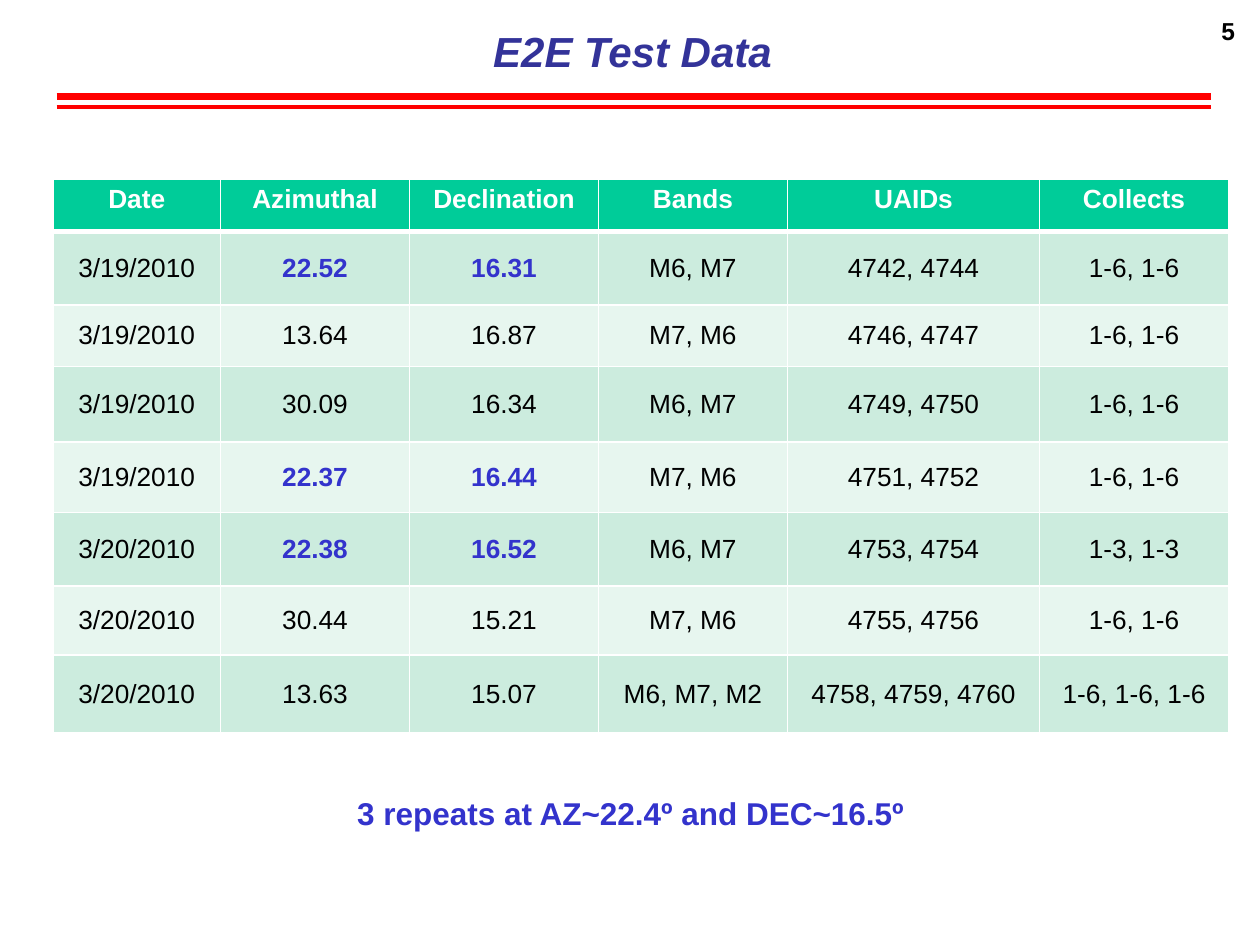
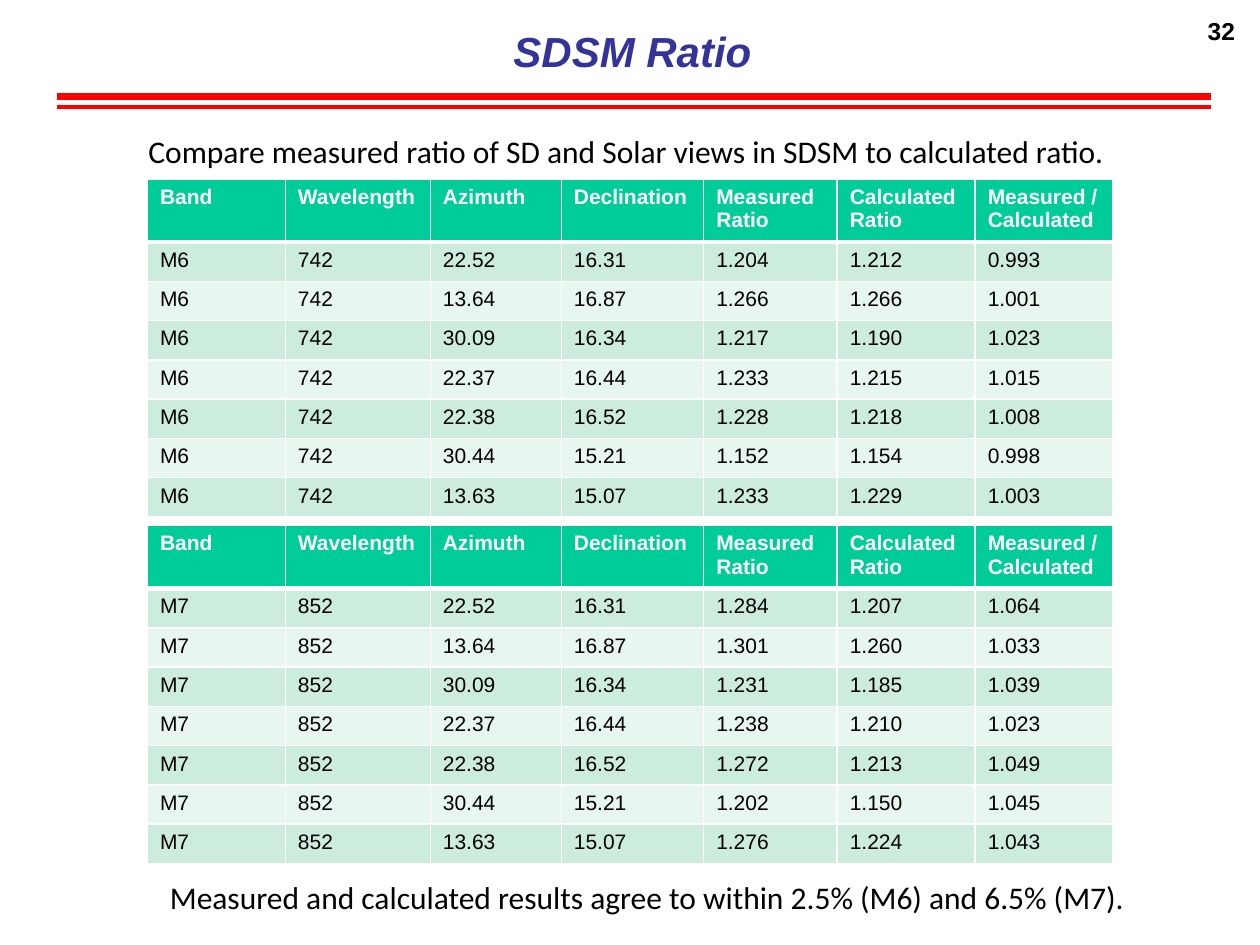
from lxml.etree import SubElement
from pptx import Presentation
from pptx.dml.color import RGBColor
from pptx.enum.shapes import MSO_CONNECTOR
from pptx.enum.text import MSO_ANCHOR, MSO_AUTO_SIZE, PP_ALIGN
from pptx.oxml import parse_xml
from pptx.oxml.ns import nsdecls, qn
from pptx.util import Inches, Pt

COLORS = {
    "title": "333399", "rule": "FF0000", "accent": "3333CC", "ink": "000000",
    "white": "FFFFFF", "header": "00CC99", "dark band": "CCECDE", "light band": "E7F6EF",
}

deck = Presentation()
deck.slide_width, deck.slide_height = Inches(10), Inches(7.5)
# The slide is a grid of 100 columns and 75 rows
COLUMN = deck.slide_width / 100
ROW = deck.slide_height / 75


def write(frame, text, size=18, font="Arial", color="ink", bold=False, italic=False,
          align=PP_ALIGN.LEFT):
    para = frame.paragraphs[0]
    para.alignment = align
    span = para.add_run()
    span.text = text
    span.font.size, span.font.name = Pt(size), font
    span.font.bold, span.font.italic = bold, italic
    span.font.color.rgb = RGBColor.from_string(COLORS[color])


def draw_table(page, left, top, widths, heights, lines, size, align, anchor, is_key):
    """Banded table; is_key(row, column) picks the highlighted cells."""
    table = page.shapes.add_table(
        len(heights), len(widths), int(left * COLUMN), int(top * ROW),
        int(sum(widths) * COLUMN), int(sum(heights) * ROW)).table
    for column, width in zip(table.columns, widths):
        column.width = int(width * COLUMN)
    for number, (line, height) in enumerate(zip(lines, heights)):
        table.rows[number].height = int(height * ROW)
        band = "header" if number == 0 else "dark band" if number % 2 else "light band"
        for place, text in enumerate(line):
            cell = table.cell(number, place)
            cell.vertical_anchor = anchor if number else MSO_ANCHOR.TOP
            key = number > 0 and is_key(number, place)
            color = "white" if number == 0 else "accent" if key else "ink"
            write(cell.text_frame, text, size=size, color=color,
                  bold=number == 0 or key, align=align)
            # White borders, thicker between header and body
            thickness = {"L": 1, "R": 1, "T": 3 if number == 1 else 1, "B": 1 if number else 3}
            properties = cell._tc.get_or_add_tcPr()
            for side, points in thickness.items():
                properties.append(parse_xml(
                    f'<a:ln{side} {nsdecls("a")} w="{Pt(points)}"><a:solidFill>'
                    f'<a:srgbClr val="{COLORS["white"]}"/></a:solidFill></a:ln{side}>'))
            cell.fill.solid()
            cell.fill.fore_color.rgb = RGBColor.from_string(COLORS[band])


# Page frame: number, title and double rule, plus each page's own sentences
data_notes = [
    ((23.3, 62.5, 53.5, 4), "3 repeats at AZ~22.4º and DEC~16.5º", True,
     dict(color="accent", bold=True, align=PP_ALIGN.CENTER)),
]
ratio_notes = [
    ((10.8, 10, 78.4, 4),
     "Compare measured ratio of SD and Solar views in SDSM to calculated ratio.", False,
     dict(font="Calibri")),
    ((12.5, 69.2, 78.7, 4),
     "Measured and calculated results agree to within 2.5% (M6) and 6.5% (M7).", False,
     dict(font="Calibri")),
]
pages = []
for page_number, title, notes in [("5", "E2E Test Data", data_notes),
                                  ("32", "SDSM Ratio", ratio_notes)]:
    page = deck.slides.add_slide(deck.slide_layouts[6])
    pages.append(page)
    frame_texts = [
        ((91.8, 0.8, 7.2, 5.1), page_number, True,
         dict(size=14, bold=True, align=PP_ALIGN.RIGHT)),
        ((5.2, 1.5, 90, 5), title, True,
         dict(size=24, color="title", bold=True, italic=True, align=PP_ALIGN.CENTER)),
    ]
    for (left, top, width, height), text, wraps, style in frame_texts + notes:
        box = page.shapes.add_textbox(int(left * COLUMN), int(top * ROW),
                                      int(width * COLUMN), int(height * ROW))
        box.text_frame.word_wrap = wraps
        if text == title:
            box.text_frame.vertical_anchor = MSO_ANCHOR.MIDDLE
        elif text != page_number:
            box.text_frame.auto_size = MSO_AUTO_SIZE.SHAPE_TO_FIT_TEXT
        write(box.text_frame, text, **style)
    for height, weight in [(7.7, 4), (8.5, 2)]:
        rule = page.shapes.add_connector(
            MSO_CONNECTOR.STRAIGHT, int(4.5 * COLUMN), int(height * ROW),
            int(96.1 * COLUMN), int(height * ROW))
        rule.line.width = Pt(weight)
        rule.line.color.rgb = RGBColor.from_string(COLORS["rule"])
        SubElement(rule._element.spPr, qn("a:effectLst"))
data_page, ratio_page = pages

# Angles measured in each test, used on both pages
angles = [("22.52", "16.31"), ("13.64", "16.87"), ("30.09", "16.34"), ("22.37", "16.44"),
          ("22.38", "16.52"), ("30.44", "15.21"), ("13.63", "15.07")]

# Test data table, with the repeated angles highlighted
tests = [
    ("3/19/2010", "M6, M7", "4742, 4744", "1-6, 1-6"),
    ("3/19/2010", "M7, M6", "4746, 4747", "1-6, 1-6"),
    ("3/19/2010", "M6, M7", "4749, 4750", "1-6, 1-6"),
    ("3/19/2010", "M7, M6", "4751, 4752", "1-6, 1-6"),
    ("3/20/2010", "M6, M7", "4753, 4754", "1-3, 1-3"),
    ("3/20/2010", "M7, M6", "4755, 4756", "1-6, 1-6"),
    ("3/20/2010", "M6, M7, M2", "4758, 4759, 4760", "1-6, 1-6, 1-6"),
]
test_lines = [("Date", "Azimuthal", "Declination", "Bands", "UAIDs", "Collects")]
test_lines += [(date, *angle, *rest) for (date, *rest), angle in zip(tests, angles)]
draw_table(data_page, 4.2, 14.2, [13.3, 15, 15, 15, 20, 15],
           [4.2, 5.8, 4.9, 6, 5.6, 5.8, 5.5, 6.2], test_lines, 15,
           PP_ALIGN.CENTER, MSO_ANCHOR.MIDDLE,
           lambda row, column: row in (1, 4, 5) and column in (1, 2))

# One ratio table per band
ratio_header = ("Band", "Wavelength", "Azimuth", "Declination", "Measured Ratio",
                "Calculated Ratio", "Measured / Calculated")
bands = [
    ("M6", "742", 14.2, [
        ("1.204", "1.212", "0.993"), ("1.266", "1.266", "1.001"),
        ("1.217", "1.190", "1.023"), ("1.233", "1.215", "1.015"),
        ("1.228", "1.218", "1.008"), ("1.152", "1.154", "0.998"),
        ("1.233", "1.229", "1.003")]),
    ("M7", "852", 41.7, [
        ("1.284", "1.207", "1.064"), ("1.301", "1.260", "1.033"),
        ("1.231", "1.185", "1.039"), ("1.238", "1.210", "1.023"),
        ("1.272", "1.213", "1.049"), ("1.202", "1.150", "1.045"),
        ("1.276", "1.224", "1.043")]),
]
for band, wavelength, top, ratios in bands:
    ratio_lines = [ratio_header]
    ratio_lines += [(band, wavelength, *angle, *ratio) for angle, ratio in zip(angles, ratios)]
    draw_table(ratio_page, 11.7, top, [10.95, 11.5, 10.4, 11.3, 10.6, 10.95, 10.95],
               [4.8] + [3.12] * len(ratios), ratio_lines, 12,
               PP_ALIGN.LEFT, MSO_ANCHOR.TOP, lambda row, column: False)

deck.save("out.pptx")
